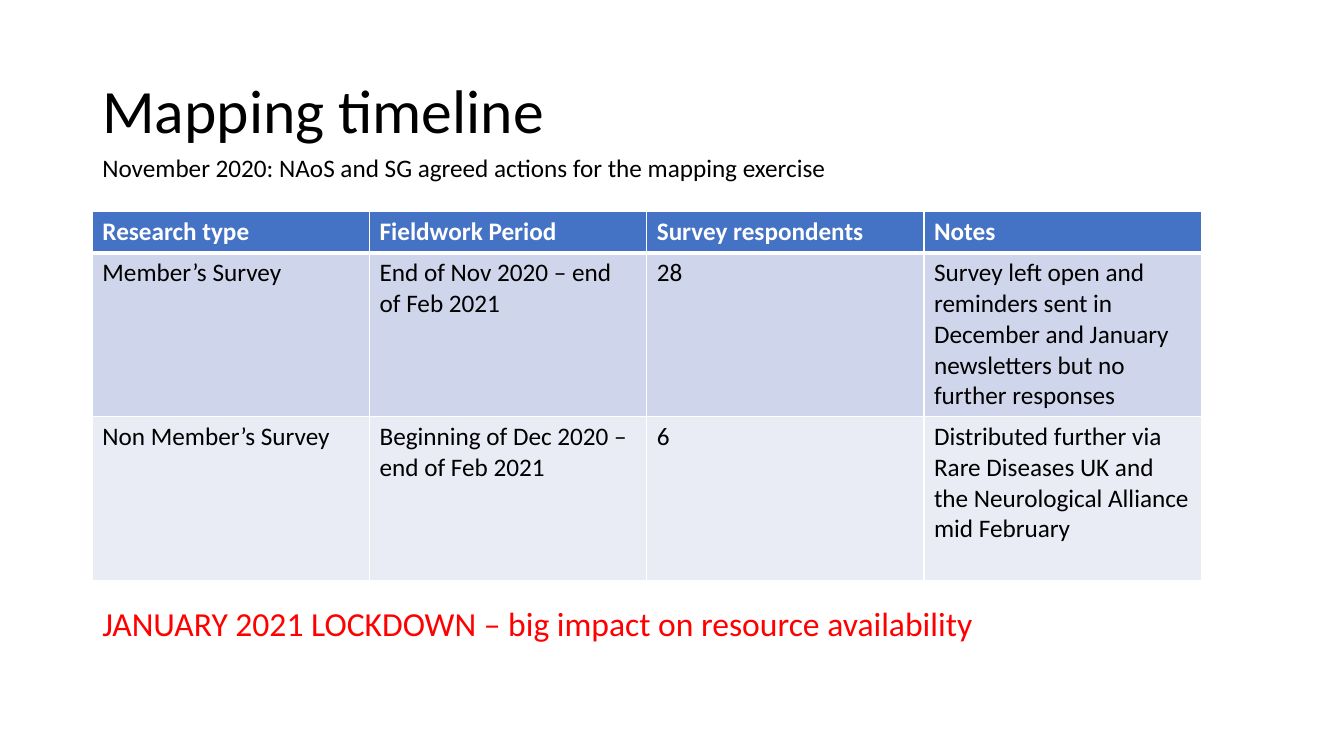
import pptx
import pptx.dml.color
import pptx.enum.text
import pptx.oxml
import pptx.oxml.ns
import pptx.util

RGBColor = pptx.dml.color.RGBColor
ANCHOR = pptx.enum.text.MSO_ANCHOR

BLACK = RGBColor(0x00, 0x00, 0x00)
WHITE = RGBColor(0xFF, 0xFF, 0xFF)
RED = RGBColor(0xFF, 0x00, 0x00)
HEADER_BLUE = RGBColor(0x44, 0x72, 0xC4)
BANDS = [RGBColor(0xCF, 0xD5, 0xEA), RGBColor(0xE9, 0xEB, 0xF5)]

# Grid of 160 columns by 90 rows, twelve units to the inch
UNIT = pptx.util.Inches(1) // 12
COLS, ROWS = 160, 90
LEFT, TABLE_COL = 11, 33
ROW_HEIGHTS = [4.9, 19.5, 19.5]

TIMELINE = [
    ["Research type", "Fieldwork Period", "Survey respondents", "Notes"],
    ["Member’s Survey", "End of Nov 2020 – end of Feb 2021", "28",
     "Survey left open and reminders sent in December and January "
     "newsletters but no further responses"],
    ["Non Member’s Survey", "Beginning of Dec 2020 – end of Feb 2021", "6",
     "Distributed further via Rare Diseases UK and the Neurological "
     "Alliance mid February"],
]


def grid(n):
    return pptx.util.Emu(round(n * UNIT))


def write(tf, text, size=18, color=BLACK, bold=False, spacing=None):
    """Fill a text frame with one formatted paragraph."""
    tf.word_wrap = True
    p = tf.paragraphs[0]
    if spacing:
        p.line_spacing = spacing
    r = p.add_run()
    r.text = text
    r.font.name = "Calibri"
    r.font.size = pptx.util.Pt(size)
    r.font.bold = bold
    r.font.color.rgb = color


def add_text(slide, text, top, width, height, anchor=ANCHOR.TOP, **fmt):
    sp = slide.shapes.add_textbox(grid(LEFT), grid(top), grid(width), grid(height))
    sp.text_frame.vertical_anchor = anchor
    write(sp.text_frame, text, **fmt)


def set_borders(cell, **widths):
    """Draw white borders; widths are points by side."""
    tc_pr = cell._tc.get_or_add_tcPr()
    for side in "LRTB":
        width = pptx.util.Pt(widths.get(side, 1))
        tc_pr.append(pptx.oxml.parse_xml(
            f'<a:ln{side} {pptx.oxml.ns.nsdecls("a")} w="{width}"><a:solidFill>'
            f'<a:srgbClr val="{WHITE}"/></a:solidFill></a:ln{side}>'))


def add_timeline(slide, top):
    n_rows, n_cols = len(TIMELINE), len(TIMELINE[0])
    table = slide.shapes.add_table(
        n_rows, n_cols, grid(LEFT), grid(top),
        grid(n_cols * TABLE_COL), grid(sum(ROW_HEIGHTS))).table
    for column in table.columns:
        column.width = grid(TABLE_COL)
    for i, (row, height) in enumerate(zip(TIMELINE, ROW_HEIGHTS)):
        table.rows[i].height = grid(height)
        header = i == 0
        for j, text in enumerate(row):
            cell = table.cell(i, j)
            # The rule under the header is heavier
            set_borders(cell, B=3 if header else 1, T=3 if i == 1 else 1)
            cell.fill.solid()
            cell.fill.fore_color.rgb = HEADER_BLUE if header else BANDS[i - 1]
            write(cell.text_frame, text, bold=header,
                  color=WHITE if header else BLACK)


def main():
    prs = pptx.Presentation()
    prs.slide_width, prs.slide_height = grid(COLS), grid(ROWS)
    slide = prs.slides.add_slide(prs.slide_layouts[6])

    # Heading
    add_text(slide, "Mapping timeline", 4.8, 138, 17.4,
             anchor=ANCHOR.MIDDLE, size=44, spacing=0.9)

    # Survey table
    add_timeline(slide, 25.2)

    # Lines below and above the table
    add_text(slide, "JANUARY 2021 LOCKDOWN – big impact on resource availability",
             71.2, 132, 6, size=24, color=RED)
    add_text(slide, "November 2020: NAoS and SG agreed actions for the mapping exercise",
             17.6, 110, 4.8)

    prs.save("out.pptx")


if __name__ == "__main__":
    main()
